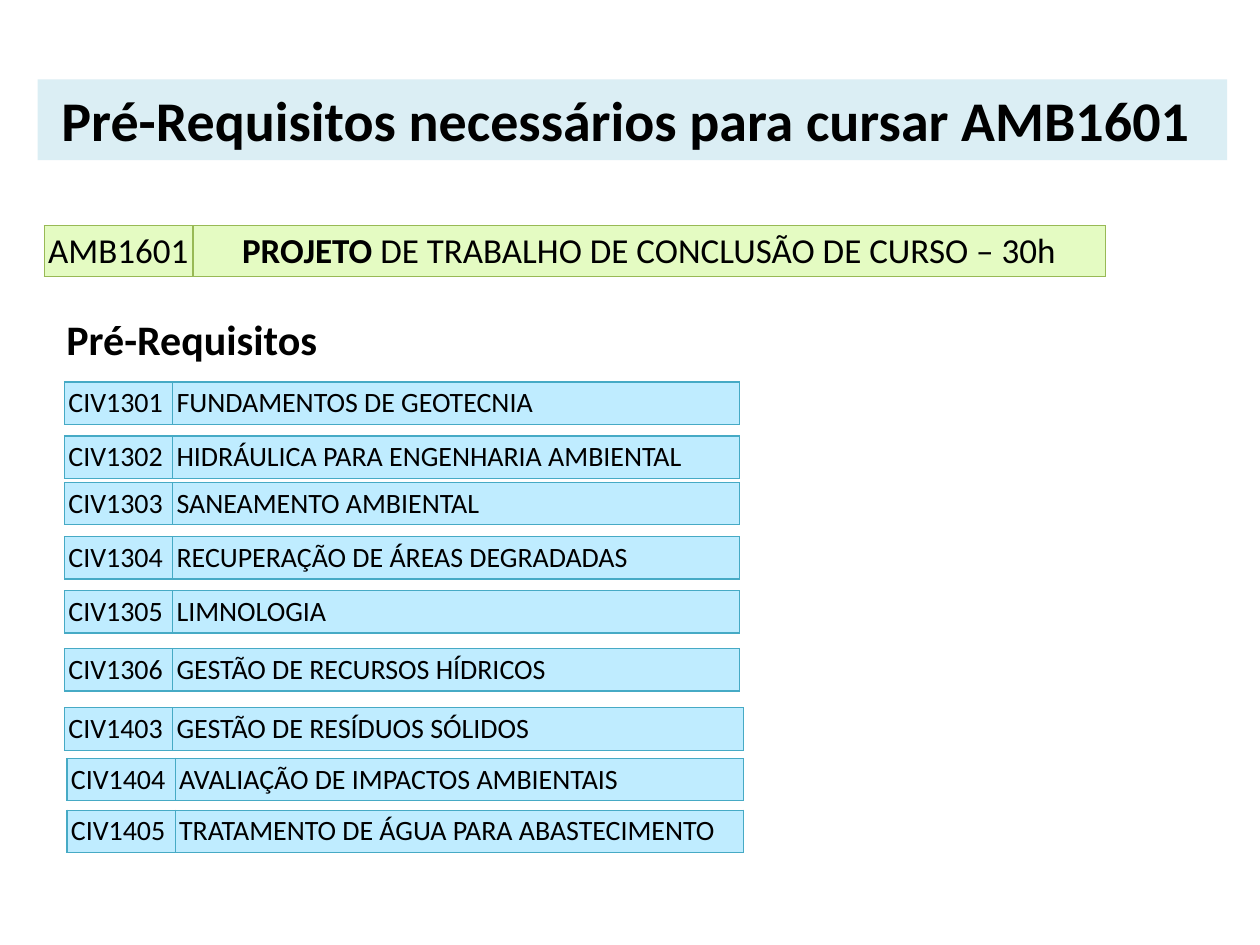
from pptx import Presentation
from pptx.dml.color import RGBColor
from pptx.enum.shapes import MSO_SHAPE
from pptx.enum.text import MSO_ANCHOR, PP_ALIGN
from pptx.oxml import parse_xml
from pptx.oxml.ns import nsdecls
from pptx.util import Cm, Pt

RECT = MSO_SHAPE.RECTANGLE
MIDDLE = MSO_ANCHOR.MIDDLE
LEFT, CENTER = PP_ALIGN.LEFT, PP_ALIGN.CENTER

BLACK = RGBColor(0x00, 0x00, 0x00)
TITLE_FILL = RGBColor(0xDB, 0xEE, 0xF4)
BLUE_FILL = RGBColor(0xBF, 0xEC, 0xFF)
BLUE_LINE = RGBColor(0x46, 0xAA, 0xC5)
GREEN_FILL = RGBColor(0xE4, 0xFB, 0xC2)
GREEN_LINE = RGBColor(0x98, 0xB9, 0x55)

COURSE_LEFT, COURSE_HEIGHT, CODE_WIDTH = 1.3, 0.82, 2.18
INDENTED_LEFT = 1.35

# Code, name, left, top and name width (cm)
COURSES = [
    ("CIV1301", "FUNDAMENTOS DE GEOTECNIA", COURSE_LEFT, 7.7, 11.43),
    ("CIV1302", "HIDRÁULICA PARA ENGENHARIA AMBIENTAL", COURSE_LEFT, 8.79, 11.43),
    ("CIV1303", "SANEAMENTO AMBIENTAL", COURSE_LEFT, 9.73, 11.43),
    ("CIV1304", "RECUPERAÇÃO DE ÁREAS DEGRADADAS", COURSE_LEFT, 10.82, 11.43),
    ("CIV1305", "LIMNOLOGIA", COURSE_LEFT, 11.91, 11.43),
    ("CIV1306", "GESTÃO DE RECURSOS HÍDRICOS", COURSE_LEFT, 13.08, 11.43),
    ("CIV1403", "GESTÃO DE RESÍDUOS SÓLIDOS", COURSE_LEFT, 14.27, 11.51),
    ("CIV1404", "AVALIAÇÃO DE IMPACTOS AMBIENTAIS", INDENTED_LEFT, 15.29, 11.46),
    ("CIV1405", "TRATAMENTO DE ÁGUA PARA ABASTECIMENTO", INDENTED_LEFT, 16.33, 11.46),
]


class SlideBuilder:
    font = "Calibri"
    cell_margin = Cm(0.08)
    border_width = Pt(0.75)

    def __init__(self, slide):
        self.slide = slide

    def format_run(self, r, size, bold=False):
        r.font.name = self.font
        r.font.size = Pt(size)
        r.font.bold = bold
        r.font.color.rgb = BLACK

    def heading(self, sp, text, size, align):
        tf = sp.text_frame
        tf.text = text
        p = tf.paragraphs[0]
        p.alignment = align
        p.space_before = Pt(12)
        self.format_run(p.runs[0], size, bold=True)
        return tf

    def banner(self, text, left, top, width, height, size):
        sp = self.slide.shapes.add_shape(
            RECT, Cm(left), Cm(top), Cm(width), Cm(height))
        sp.shadow.inherit = False
        sp.fill.solid()
        sp.fill.fore_color.rgb = TITLE_FILL
        sp.line.fill.background()
        tf = self.heading(sp, text, size, CENTER)
        tf.word_wrap = False
        tf.vertical_anchor = MSO_ANCHOR.TOP

    def label(self, text, left, top, width, height, size):
        sp = self.slide.shapes.add_textbox(
            Cm(left), Cm(top), Cm(width), Cm(height))
        self.heading(sp, text, size, LEFT).word_wrap = True

    def border(self, cell, color):
        tc_pr = cell._tc.get_or_add_tcPr()
        for i, side in enumerate(("lnL", "lnR", "lnT", "lnB")):
            tc_pr.insert(i, parse_xml(
                f'<a:{side} {nsdecls("a")} w="{self.border_width}"><a:solidFill>'
                f'<a:srgbClr val="{color}"/></a:solidFill></a:{side}>'))

    def row_table(self, cells, left, top, widths, height, size, fill, line,
                  name_align=LEFT):
        """One-row table; each cell is a list of (text, bold) runs."""
        table = self.slide.shapes.add_table(
            1, len(cells), Cm(left), Cm(top), Cm(sum(widths)), Cm(height)).table
        table.first_row = table.horz_banding = False
        for i, (runs, width) in enumerate(zip(cells, widths)):
            table.columns[i].width = Cm(width)
            cell = table.cell(0, i)
            cell.fill.solid()
            cell.fill.fore_color.rgb = fill
            self.border(cell, line)
            cell.vertical_anchor = MIDDLE
            cell.margin_left = cell.margin_right = self.cell_margin
            cell.margin_top = cell.margin_bottom = self.cell_margin
            p = cell.text_frame.paragraphs[0]
            p.alignment = name_align if i else LEFT
            for text, bold in runs:
                r = p.add_run()
                r.text = text
                self.format_run(r, size, bold)


def main():
    prs = Presentation()
    prs.slide_width, prs.slide_height = Cm(25.4), Cm(19.05)
    s = SlideBuilder(prs.slides.add_slide(prs.slide_layouts[6]))

    # Prerequisite courses
    for code, name, left, top, name_width in COURSES:
        s.row_table([[(code, False)], [(name, False)]], left, top,
                    (CODE_WIDTH, name_width), COURSE_HEIGHT, 16,
                    BLUE_FILL, BLUE_LINE)

    # Target course
    project = [("PROJETO", True),
               (" DE TRABALHO DE CONCLUSÃO DE CURSO – 30h", False)]
    s.row_table([[("AMB1601", False)], project], 0.89, 4.55, (3, 18.39), 0.99,
                20, GREEN_FILL, GREEN_LINE, CENTER)

    # Headings
    s.label("Pré-Requisitos", 1.09, 6.2, 23.6, 1.27, 24)
    s.banner("Pré-Requisitos necessários para cursar AMB1601 ",
             0.76, 1.6, 23.98, 1.63, 32)

    prs.save("out.pptx")


if __name__ == "__main__":
    main()
